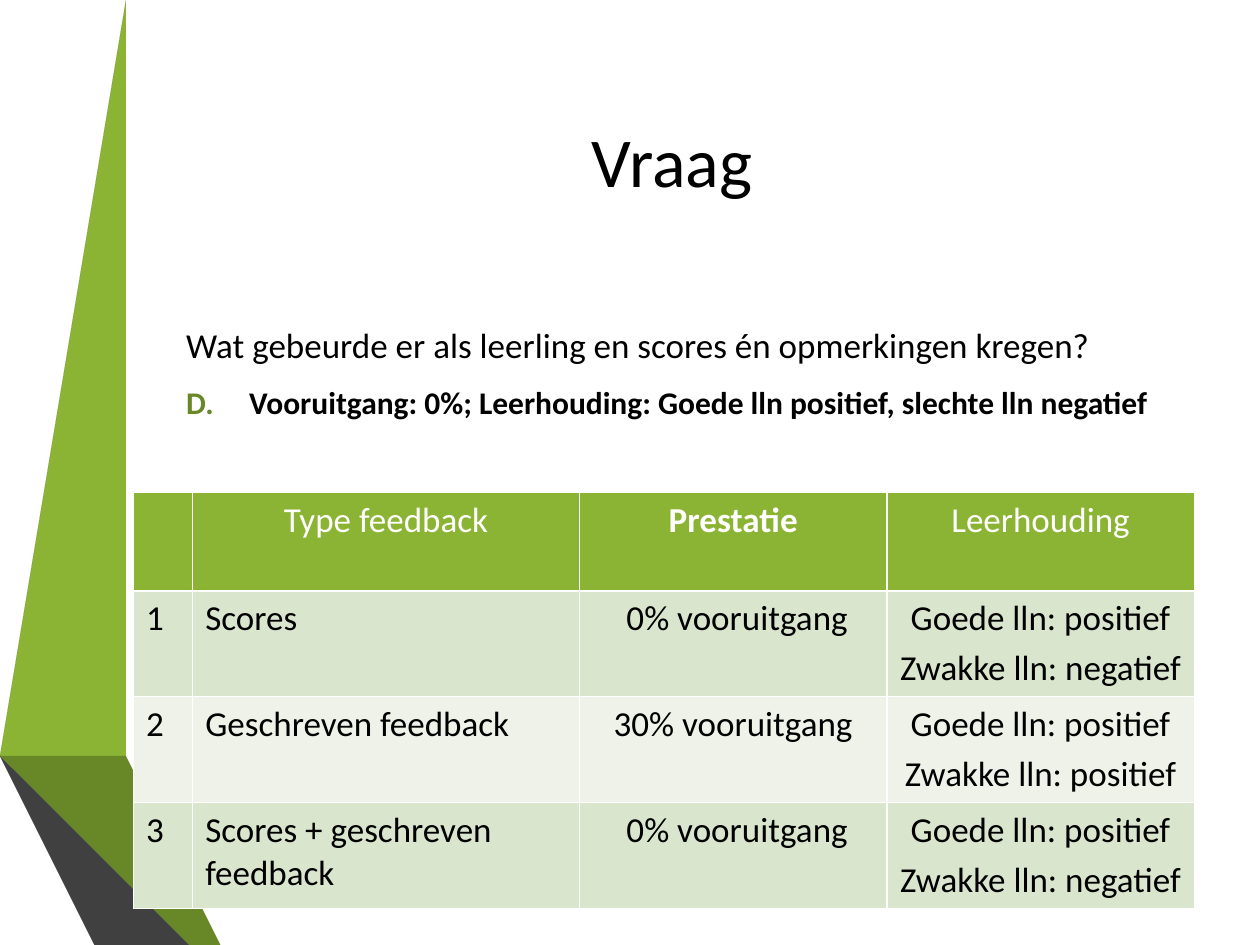
from lxml import etree
from pptx import Presentation
from pptx import util as u
from pptx.dml.color import RGBColor
from pptx.enum import text
from pptx.oxml import ns

BLACK = RGBColor(0x00, 0x00, 0x00)
WHITE = RGBColor(0xFF, 0xFF, 0xFF)
GREEN = RGBColor(0x8B, 0xB4, 0x34)
DARK_GREEN = RGBColor(0x68, 0x87, 0x27)
DEEP_GREEN = RGBColor(0x46, 0x5A, 0x1A)
GREY = RGBColor(0x59, 0x59, 0x59)
DARK_GREY = RGBColor(0x40, 0x40, 0x40)
DEEP_GREY = RGBColor(0x26, 0x26, 0x26)
ROW_TINTS = (RGBColor(0xDA, 0xE5, 0xCE), RGBColor(0xEE, 0xF2, 0xE8))

RIBBONS = [
    (GREEN, [(0.38, 5.78), (0.58, 5.83), (1.3, 0), (1.09, 0)]),
    (GREY, [(1.04, 0), (0.83, 0), (0.12, 5.73), (0.33, 5.77)]),
    (DEEP_GREY, [(0.12, 5.73), (1.09, 7.5), (1.13, 7.5)]),
    (DEEP_GREEN, [(0.38, 5.79), (1.56, 7.5), (1.6, 7.5)]),
    (DARK_GREEN, [(0.38, 5.78), (1.6, 7.5), (2.12, 7.5), (0.58, 5.83)]),
    (DARK_GREY, [(1.51, 7.5), (0.36, 5.83), (0.33, 5.77), (0.12, 5.73), (1.13, 7.5)]),
]

HEADERS = ["", "Type feedback", "Prestatie", "Leerhouding"]
RESULTS = [
    ["1", "Scores", " 0% vooruitgang", "Goede lln: positief\nZwakke lln: negatief"],
    ["2", "Geschreven feedback", "30% vooruitgang", "Goede lln: positief\nZwakke lln: positief"],
    ["3", "Scores + geschreven feedback", " 0% vooruitgang",
     "Goede lln: positief\nZwakke lln: negatief"],
]
COLUMN_WIDTHS = [0.47, 3.07, 2.44, 2.44]
ROW_HEIGHTS = [0.78, 0.84, 0.84, 0.84]


class SlideBuilder:
    def __init__(self, slide, font_name):
        self.slide = slide
        self.font_name = font_name

    def style(self, paragraph, size, color=BLACK, bold=False, align=text.PP_ALIGN.LEFT):
        paragraph.alignment = align
        font = paragraph.font
        font.name, font.size, font.bold = self.font_name, u.Pt(size), bold
        font.color.rgb = color

    def ribbon(self, color, points):
        builder = self.slide.shapes.build_freeform(*points[0], scale=u.Inches(1))
        builder.add_line_segments(points[1:], close=True)
        shape = builder.convert_to_shape()
        shape.shadow.inherit = False
        shape.fill.solid()
        shape.fill.fore_color.rgb = color
        shape.line.fill.background()

    def text_box(self, left, top, width, height):
        box = self.slide.shapes.add_textbox(*map(u.Inches, (left, top, width, height)))
        frame = box.text_frame
        frame.word_wrap = True
        frame.vertical_anchor = text.MSO_ANCHOR.MIDDLE
        return frame

    def title(self, words):
        paragraph = self.text_box(1.22, 0.75, 8.22, 1.03).paragraphs[0]
        paragraph.text = words
        self.style(paragraph, 40, align=text.PP_ALIGN.CENTER)

    def question(self, words, answer):
        frame = self.text_box(1.38, 1.78, 8.54, 2.6)
        frame.margin_bottom = u.Inches(0.3)
        lines = [(frame.paragraphs[0], words, 20), (frame.add_paragraph(), answer, 18)]
        for paragraph, line, size in lines:
            paragraph.text = line
            paragraph.space_before = u.Pt(size * 0.2)
            paragraph.space_after = u.Pt(6)
        self.letter_bullet(paragraph, 4, DARK_GREEN)
        for paragraph, line, size in lines:
            self.style(paragraph, size, bold=line == answer)

    def letter_bullet(self, paragraph, start, color):
        properties = paragraph._p.get_or_add_pPr()
        indent = u.Inches(0.5)
        properties.set("marL", str(indent))
        properties.set("indent", str(-indent))
        bullet_color = etree.SubElement(properties, ns.qn("a:buClr"))
        etree.SubElement(bullet_color, ns.qn("a:srgbClr"), val=str(color))
        etree.SubElement(properties, ns.qn("a:buAutoNum"),
                         type="alphaUcPeriod", startAt=str(start))

    def cell_borders(self, cell, color, points):
        properties = cell._tc.get_or_add_tcPr()
        for index, side in enumerate("LRTB"):
            line = etree.Element(ns.qn(f"a:ln{side}"), w=str(u.Pt(points)))
            fill = etree.SubElement(line, ns.qn("a:solidFill"))
            etree.SubElement(fill, ns.qn("a:srgbClr"), val=str(color))
            properties.insert(index, line)

    def table(self, left, top, rows):
        size = sum(COLUMN_WIDTHS), sum(ROW_HEIGHTS)
        table = self.slide.shapes.add_table(
            len(rows), len(COLUMN_WIDTHS), *map(u.Inches, (left, top, *size))).table
        for column, width in zip(table.columns, COLUMN_WIDTHS):
            column.width = u.Inches(width)
        for row, height in zip(table.rows, ROW_HEIGHTS):
            row.height = u.Inches(height)
        for row_index, values in enumerate(rows):
            header = row_index == 0
            for column_index, value in enumerate(values):
                cell = table.cell(row_index, column_index)
                cell.text = value
                cell.fill.solid()
                cell.fill.fore_color.rgb = GREEN if header else ROW_TINTS[(row_index - 1) % 2]
                self.cell_borders(cell, WHITE, 1)
                centred = header or column_index >= 2
                for paragraph in cell.text_frame.paragraphs:
                    paragraph.space_before = u.Pt(4)
                    self.style(paragraph, 20, WHITE if header else BLACK,
                               bold=value == "Prestatie",
                               align=text.PP_ALIGN.CENTER if centred else text.PP_ALIGN.LEFT)


def main():
    presentation = Presentation()
    presentation.slide_width, presentation.slide_height = u.Inches(10), u.Inches(7.5)
    slide = presentation.slides.add_slide(presentation.slide_layouts[6])
    builder = SlideBuilder(slide, "Calibri")
    for color, points in RIBBONS:
        builder.ribbon(color, points)
    builder.title("Vraag")
    builder.question("Wat gebeurde er als leerling en scores én opmerkingen kregen?",
                     "Vooruitgang: 0%; Leerhouding: Goede lln positief, slechte lln negatief")
    builder.table(1.06, 3.91, [HEADERS, *RESULTS])
    presentation.save("out.pptx")


if __name__ == "__main__":
    main()
